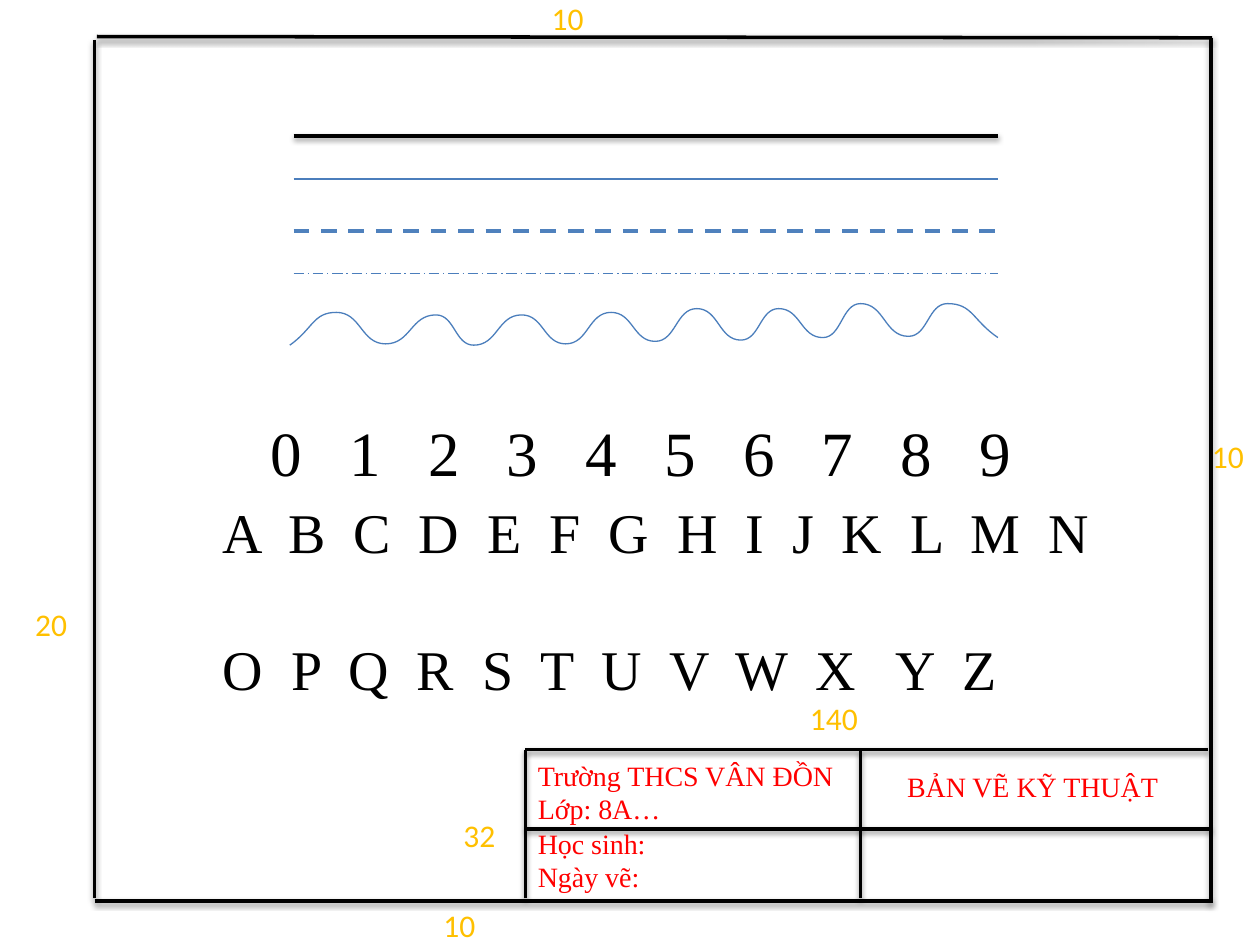
from dataclasses import dataclass

import pptx
import pptx.dml.color
import pptx.enum.dml
import pptx.enum.shapes
import pptx.enum.text
import pptx.oxml
import pptx.oxml.ns
import pptx.util

Inches = pptx.util.Inches
Pt = pptx.util.Pt
RGB = pptx.dml.color.RGBColor.from_string
Dash = pptx.enum.dml.MSO_LINE
A_NS = pptx.oxml.ns.nsdecls("a")


@dataclass(frozen=True)
class Theme:
    ink: str = "000000"
    thin_blue: str = "4B7EBC"
    dash_blue: str = "4F81BD"
    title_red: str = "FF0000"
    dimension: str = "FFC000"
    serif: str = "Times New Roman"
    sans: str = "Calibri"
    digits_pt: float = 36
    letters_pt: float = 32
    dimension_pt: float = 18
    title_pt: float = 16
    bold_line: float = 2
    dash_line: float = 2.25
    thin_line: float = 0.75


class DrawingSheet:
    def __init__(self, slide, theme):
        self.slide = slide
        self.theme = theme

    def line(self, start, end, color, width, dash=None, shadow=False):
        ends = [Inches(v) for v in (*start, *end)]
        rule = self.slide.shapes.add_connector(
            pptx.enum.shapes.MSO_CONNECTOR.STRAIGHT, *ends)
        rule.line.color.rgb = RGB(color)
        rule.line.width = Pt(width)
        if dash:
            rule.line.dash_style = dash
        drop = (f'<a:outerShdw blurRad="{Pt(3.1)}" dist="{Pt(1.6)}" dir="5400000" '
                'rotWithShape="0"><a:srgbClr val="000000"><a:alpha val="38000"/>'
                '</a:srgbClr></a:outerShdw>') if shadow else ""
        rule._element.spPr.append(pptx.oxml.parse_xml(
            f"<a:effectLst {A_NS}>{drop}</a:effectLst>"))

    def bold_line(self, start, end):
        self.line(start, end, self.theme.ink, self.theme.bold_line, shadow=True)

    def wave(self, points):
        """Join crests and troughs with curves that are level at each turn."""
        corners = [(Inches(x), Inches(y)) for x, y in points]
        builder = self.slide.shapes.build_freeform(*corners[0])
        builder.add_line_segments(corners[1:], close=False)
        curve = builder.convert_to_shape()
        curve.shadow.inherit = False
        curve.fill.background()
        curve.line.color.rgb = RGB(self.theme.thin_blue)
        curve.line.width = Pt(self.theme.thin_line)

        left, top = curve.left, curve.top
        segments = curve._element.spPr.findall(".//" + pptx.oxml.ns.qn("a:lnTo"))
        last = len(segments) - 1
        for i, segment in enumerate(segments):
            (x0, y0), (x1, y1) = corners[i], corners[i + 1]
            mid_x, mid_y = (x0 + x1) // 2, (y0 + y1) // 2
            controls = [(mid_x, mid_y if i == 0 else y0),
                        (mid_x, mid_y if i == last else y1), (x1, y1)]
            pts = "".join(f'<a:pt x="{x - left}" y="{y - top}"/>' for x, y in controls)
            segment.getparent().replace(segment, pptx.oxml.parse_xml(
                f"<a:cubicBezTo {A_NS}>{pts}</a:cubicBezTo>"))

    def text(self, box, lines, size, color, font, indent=0, gap=0):
        holder = self.slide.shapes.add_textbox(*[Inches(v) for v in box])
        frame = holder.text_frame
        frame.word_wrap = True
        frame.auto_size = pptx.enum.text.MSO_AUTO_SIZE.SHAPE_TO_FIT_TEXT
        for i, words in enumerate(lines):
            paragraph = frame.add_paragraph() if i else frame.paragraphs[0]
            if i and gap:
                paragraph.space_before = Pt(gap)
            if indent:
                paragraph._p.get_or_add_pPr().set("marL", str(Inches(indent)))
            run = paragraph.add_run()
            run.text = words
            run.font.size = Pt(size)
            run.font.name = font
            run.font.color.rgb = RGB(color)

    def title_entry(self, box, lines):
        self.text(box, lines, self.theme.title_pt, self.theme.title_red, self.theme.serif)

    def dimension(self, left, top, width, value):
        self.text((left, top, width, 0.4), [value], self.theme.dimension_pt,
                  self.theme.dimension, self.theme.sans)


def main():
    deck = pptx.Presentation()
    deck.slide_width, deck.slide_height = Inches(10), Inches(7.5)
    theme = Theme()
    sheet = DrawingSheet(deck.slides.add_slide(deck.slide_layouts[6]), theme)

    # Sheet frame
    sheet.bold_line((0.77, 0.29), (9.62, 0.3))
    sheet.bold_line((0.75, 0.32), (0.75, 7.13))
    sheet.bold_line((0.75, 7.15), (9.61, 7.15))
    sheet.bold_line((9.61, 0.3), (9.61, 7.17))

    # Title block
    block_left, block_top, divider = 4.17, 5.95, 6.83
    sheet.bold_line((block_left, 7.13), (block_left, block_top))
    sheet.bold_line((block_left, block_top), (9.59, block_top))
    sheet.bold_line((block_left, 6.58), (9.61, 6.58))
    sheet.bold_line((divider, 5.96), (divider, 7.13))
    sheet.title_entry((block_left, 5.97, 2.67, 0.64), ["Trường THCS VÂN ĐỒN", "Lớp: 8A…"])
    sheet.title_entry((block_left, 6.51, 2.67, 0.64), ["Học sinh:", "Ngày vẽ:"])
    sheet.title_entry((7.1, 6.06, 2.45, 0.37), ["BẢN VẼ KỸ THUẬT"])

    # Line types
    sample_left, sample_right = 2.33, 7.92
    sheet.bold_line((sample_left, 1.08), (sample_right, 1.08))
    for y, color, width, dash in [
        (1.42, theme.thin_blue, theme.thin_line, None),
        (1.83, theme.dash_blue, theme.dash_line, Dash.DASH),
        (2.17, theme.thin_blue, theme.thin_line, Dash.LONG_DASH_DOT),
    ]:
        sheet.line((sample_left, y), (sample_right, y), color, width, dash)
    sheet.wave([
        (2.3, 2.74), (2.67, 2.48), (3.06, 2.73), (3.46, 2.5), (3.76, 2.74),
        (4.14, 2.5), (4.49, 2.73), (4.85, 2.48), (5.2, 2.71), (5.53, 2.45),
        (5.88, 2.7), (6.18, 2.45), (6.53, 2.68), (6.83, 2.41), (7.21, 2.67),
        (7.52, 2.41), (7.92, 2.68),
    ])

    # Lettering samples
    sheet.text((1.17, 3.23, 8.08, 0.71), ["   ".join("0123456789")],
               theme.digits_pt, theme.ink, theme.serif, indent=0.88)
    sheet.text((1.67, 3.9, 7.17, 1.18),
               ["  ".join("ABCDEFGHIJKLMN"), "O  P  Q  R  S  T  U  V  W  X   Y  Z"],
               theme.letters_pt, theme.ink, theme.serif, gap=40)

    # Dimensions
    for left, top, width, value in [
        (0.18, 4.75, 0.58, "20"),
        (9.52, 3.42, 0.58, "10"),
        (3.42, 7.14, 0.75, "10"),
        (4.28, -0.06, 0.96, "10"),
        (6.33, 5.5, 1.17, "140"),
        (3.58, 6.43, 0.5, "32"),
    ]:
        sheet.dimension(left, top, width, value)

    deck.save("out.pptx")


if __name__ == "__main__":
    main()
